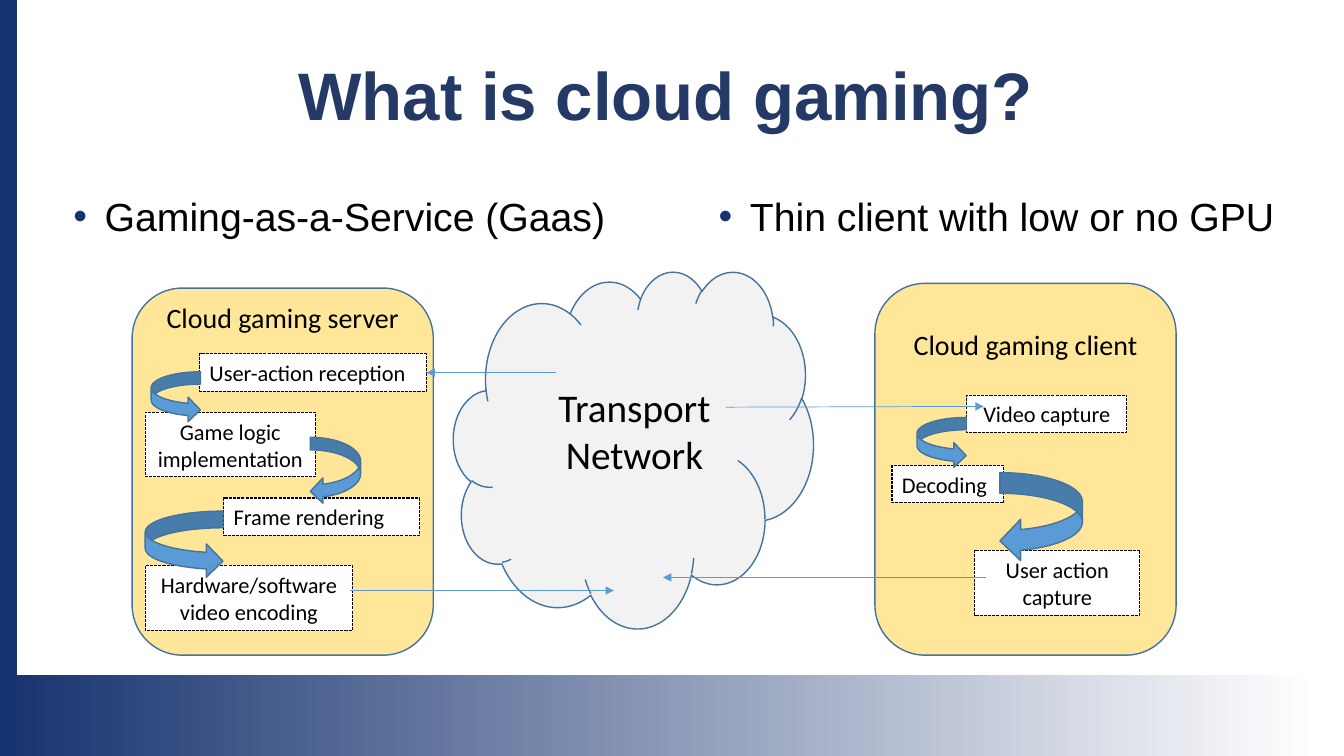
from dataclasses import dataclass
from lxml.etree import SubElement
from pptx import Presentation
from pptx.dml.color import RGBColor
from pptx.enum.dml import MSO_LINE
from pptx.enum.shapes import MSO_CONNECTOR, MSO_SHAPE
from pptx.enum.text import MSO_ANCHOR, PP_ALIGN
from pptx.oxml.ns import qn
from pptx.util import Cm, Pt


@dataclass(frozen=True)
class Theme:
    navy: RGBColor = RGBColor(0x17, 0x33, 0x6F)
    side: RGBColor = RGBColor(0x16, 0x34, 0x6F)
    title: RGBColor = RGBColor(0x25, 0x39, 0x67)
    black: RGBColor = RGBColor(0, 0, 0)
    white: RGBColor = RGBColor(0xFF, 0xFF, 0xFF)
    sand: RGBColor = RGBColor(0xFF, 0xE6, 0x99)
    blue: RGBColor = RGBColor(0x5B, 0x9B, 0xD5)
    edge: RGBColor = RGBColor(0x43, 0x73, 0x9E)
    gray: RGBColor = RGBColor(0xF2, 0xF2, 0xF2)
    head: Pt = Pt(48)
    large: Pt = Pt(28)
    label: Pt = Pt(20)
    small: Pt = Pt(16)


theme = Theme()
deck = Presentation()
deck.slide_width, deck.slide_height = Cm(33.87), Cm(19.05)
slide = deck.slides.add_slide(deck.slide_layouts[5])
shapes = slide.shapes


def draw(kind, place, fill, edge=None, width=1):
    shape = shapes.add_shape(kind, *map(Cm, place))
    shape.shadow.inherit = False
    shape.fill.solid()
    shape.fill.fore_color.rgb = fill
    if edge is None:
        shape.line.fill.background()
    else:
        shape.line.color.rgb = edge
        shape.line.width = Pt(width)
    return shape


def write(shape, text, size, align, font="Calibri", color=theme.black, bold=False):
    frame = shape.text_frame
    frame.text = text
    frame.word_wrap = True
    for para in frame.paragraphs:
        para.alignment = align
        for run in para.runs:
            run.font.name = font
            run.font.size = size
            run.font.bold = bold
            run.font.color.rgb = color
    return frame


foot = draw(MSO_SHAPE.RECTANGLE, (0, 17.02, 33.87, 2.03), theme.white)
foot.fill.gradient()
foot.fill.gradient_angle = 0
for stop, color, spot in zip(foot.fill.gradient_stops, (theme.navy, theme.white), (0, 0.98)):
    stop.color.rgb = color
    stop.position = spot
draw(MSO_SHAPE.RECTANGLE, (0, 0, 0.43, 19.05), theme.side)

title = shapes.title
title.left, title.top, title.width, title.height = map(Cm, (4.6, 1.45, 24.38, 2.44))
frame = write(title, "What is cloud gaming?", theme.head, PP_ALIGN.CENTER, "Arial", theme.title, True)
frame.vertical_anchor = MSO_ANCHOR.TOP
frame.paragraphs[0].line_spacing = 0.9

points = [
    ("Gaming-as-a-Service (Gaas)", 1.6, 14.4, PP_ALIGN.JUSTIFY),
    ("Thin client with low or no GPU", 17.86, 14.86, PP_ALIGN.LEFT),
]
for text, left, width, align in points:
    box = shapes.add_textbox(Cm(left), Cm(4.85), Cm(width), Cm(1.47))
    para = write(box, text, theme.large, align, "Arial").paragraphs[0]
    para.line_spacing = 0.9
    props = para._p.get_or_add_pPr()
    props.set("marL", str(Cm(0.79)))
    props.set("indent", str(Cm(-0.79)))
    tint = SubElement(props, qn("a:buClr"))
    SubElement(tint, qn("a:srgbClr")).set("val", str(theme.navy))
    SubElement(props, qn("a:buFont")).set("typeface", "Arial")
    SubElement(props, qn("a:buChar")).set("char", "•")

panels = [
    ("Cloud gaming server", 3.33, 7.26, 7.44),
    ("Cloud gaming client", 22.05, 7.14, 8.13),
]
for text, left, top, line in panels:
    draw(MSO_SHAPE.FLOWCHART_ALTERNATE_PROCESS, (left, top, 7.59, 16.51 - top), theme.sand, theme.edge)
    box = shapes.add_textbox(Cm(left + 0.48), Cm(line), Cm(6.63), Cm(1.12))
    write(box, text, theme.label, PP_ALIGN.CENTER)

one, two = 0.94, 1.63
steps = [
    ("User-action reception", 5.03, 8.92, 5.72, one, PP_ALIGN.LEFT),
    ("Game logic implementation", 3.66, 10.39, 4.29, two, PP_ALIGN.CENTER),
    ("Frame rendering", 5.64, 12.55, 4.93, one, PP_ALIGN.LEFT),
    ("Hardware/software video encoding", 3.66, 14.25, 5.23, two, PP_ALIGN.CENTER),
    ("Video capture", 24.36, 9.96, 4.04, one, PP_ALIGN.CENTER),
    ("Decoding", 22.48, 11.73, 2.82, one, PP_ALIGN.LEFT),
    ("User action capture", 24.56, 13.87, 4.17, two, PP_ALIGN.CENTER),
]
boxes = {}
for text, left, top, width, height, align in steps:
    box = draw(MSO_SHAPE.RECTANGLE, (left, top, width, height), theme.white, theme.black, 0.75)
    box.line.dash_style = MSO_LINE.SQUARE_DOT
    write(box, text, theme.small, align).vertical_anchor = MSO_ANCHOR.MIDDLE
    boxes[text] = box

right, left = MSO_SHAPE.CURVED_RIGHT_ARROW, MSO_SHAPE.CURVED_LEFT_ARROW
turns = [
    (right, (3.81, 9.37, 1.24, 1.27)),
    (left, (7.82, 11.02, 1.27, 1.68)),
    (right, (3.66, 12.88, 1.96, 1.68)),
    (right, (23.11, 10.52, 1.24, 1.27)),
    (left, (25.2, 11.91, 2.08, 2.24)),
]
for kind, place in turns:
    draw(kind, place, theme.blue, theme.edge)

draw(MSO_SHAPE.CLOUD, (11.43, 6.83, 9.07, 8.99), theme.gray, theme.edge)
box = shapes.add_textbox(Cm(13.64), Cm(9.53), Cm(4.7), Cm(2.64))
write(box, "Transport\nNetwork", theme.large, PP_ALIGN.CENTER)

flows = [
    ((8.81, 14.88, 15.47, 14.88), None),
    ((18.29, 10.26, 24.79, 10.24), None),
    ((24.84, 14.55, 16.71, 14.55), None),
    ((14.02, 9.39, 10.75, 9.39), "User-action reception"),
]
for ends, goal in flows:
    flow = shapes.add_connector(MSO_CONNECTOR.STRAIGHT, *map(Cm, ends))
    if goal:
        flow.end_connect(boxes[goal], 3)
    flow.line.color.rgb = theme.blue
    flow.line.width = Pt(0.5)
    SubElement(flow.line._get_or_add_ln(), qn("a:tailEnd")).set("type", "triangle")
    SubElement(flow._element.spPr, qn("a:effectLst"))

deck.save("out.pptx")
